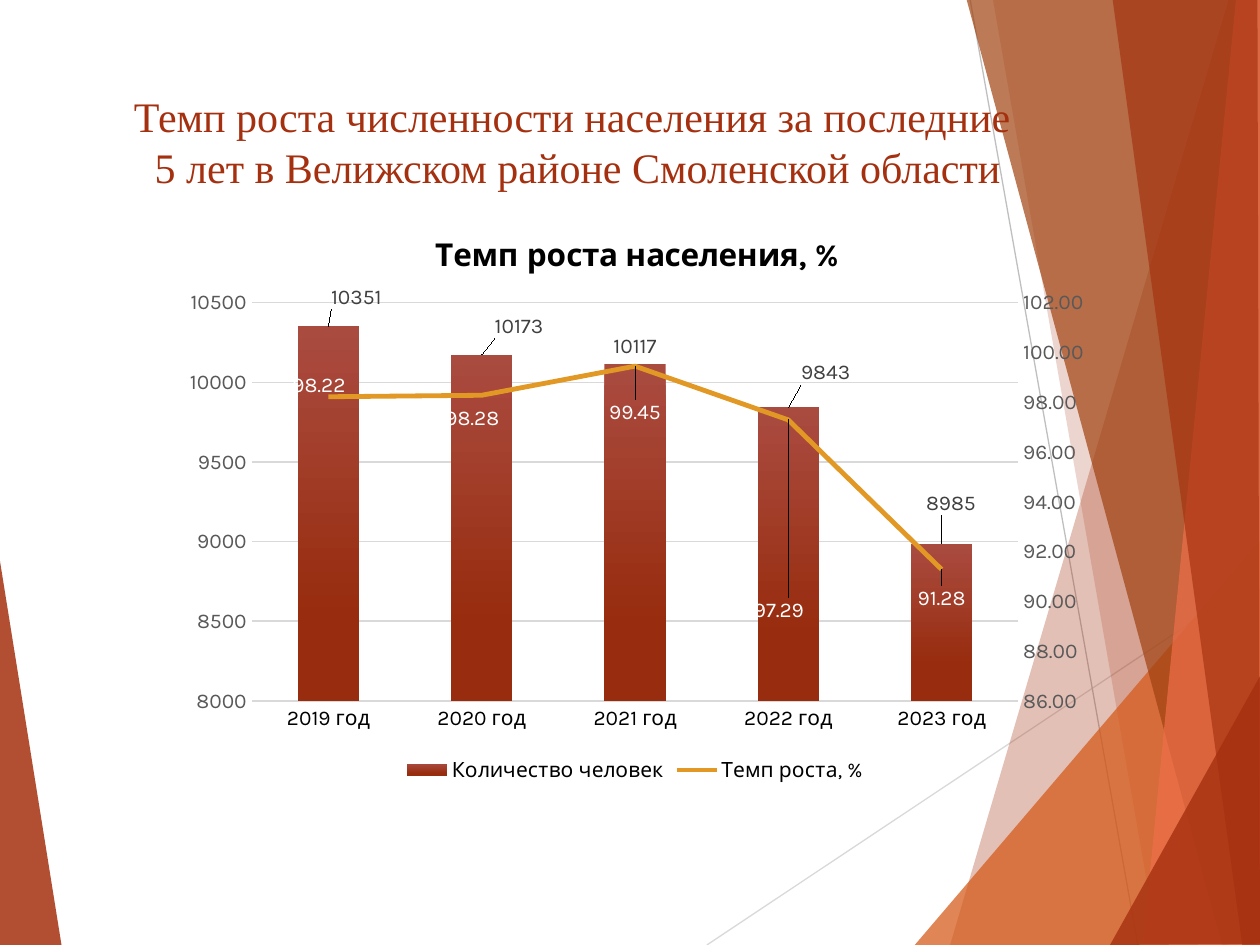
import copy
import pptx
import pptx.chart.data
import pptx.dml.color
import pptx.enum.chart
import pptx.enum.text
import pptx.oxml
import pptx.oxml.ns
import pptx.util
from pptx.util import Inches

COLORS = {
    "rust": "A5300F", "orange": "D55816", "brown": "A04210", "coral": "EE6E4A",
    "rose": "AA4B40", "brick": "972C0E", "gold": "E19825", "black": "000000",
    "white": "FFFFFF", "dark": "404040", "gray": "595959",
    "light": "D9D9D9", "silver": "BFBFBF",
}
RGB = {name: pptx.dml.color.RGBColor.from_string(code) for name, code in COLORS.items()}
qn = pptx.oxml.ns.qn
NS = pptx.oxml.ns.nsdecls("a", "c")


def write(frame, *lines, size, font, color, bold=False):
    par = frame.paragraphs[0]
    par.alignment = pptx.enum.text.PP_ALIGN.CENTER
    for num, line in enumerate(lines):
        if num:
            par.add_line_break()
        run = par.add_run()
        run.text = line
        run.font.size = pptx.util.Pt(size)
        run.font.name = font
        run.font.bold = bold
        run.font.color.rgb = RGB[color]


def layout(node, index, tags="", **nums):
    """Give a chart part a manual layout, in fractions of the chart."""
    for old in node.findall(qn("c:layout")):
        node.remove(old)
    vals = "".join(f'<c:{key} val="{num}"/>' for key, num in nums.items())
    node.insert(index, pptx.oxml.parse_xml(
        f"<c:layout {NS}><c:manualLayout>{tags}{vals}</c:manualLayout></c:layout>"))


prs = pptx.Presentation()
prs.slide_width, prs.slide_height = Inches(10), Inches(7.5)
slide = prs.slides.add_slide(prs.slide_layouts[5])
shapes = slide.shapes

# Backdrop: thin lines and translucent facets
facets = [
    ("rust", 85, [(-0.01, 4.39), (0.49, 7.51), (-0.01, 7.5)]),
    ("rust", 30, [(9.75, 0), (7.54, 7.5), (10.02, 7.51), (10.01, 0)]),
    ("rust", 20, [(7.88, -0.01), (9.19, 7.5), (10.01, 7.5), (10.01, -0.01)]),
    ("orange", 72, [(7.26, 7.5), (10, 4.29), (10.01, 7.5)]),
    ("brown", 70, [(7.67, -0.01), (9.7, 7.5), (10.01, 7.49), (10.01, -0.01)]),
    ("coral", 70, [(9.81, -0.01), (9.07, 7.5), (10.01, 7.5), (10, -0.01)]),
    ("rust", 65, [(8.83, -0.01), (9.86, 7.5), (10, 7.5), (9.98, -0.01)]),
    ("rust", 80, [(8.81, 7.5), (10.01, 5.35), (10.01, 7.49)]),
]
rays = [("light", 5.61, 7.5, 10.01, 4.57), ("silver", 7.7, 0, 9.03, 7.5)]
for num, (color, alpha, spots) in enumerate(facets):
    start, *rest = [(Inches(x), Inches(y)) for x, y in spots]
    draft = shapes.build_freeform(*start)
    draft.add_line_segments(rest, close=True)
    facet = draft.convert_to_shape()
    facet.shadow.inherit = False
    facet.fill.solid()
    facet.fill.fore_color.rgb = RGB[color]
    facet.line.fill.background()
    tone = facet._element.spPr.find(f".//{qn('a:srgbClr')}")
    tone.append(pptx.oxml.parse_xml(f'<a:alpha {NS} val="{alpha * 1000}"/>'))
    if num == 0:
        for shade, *ends in rays:
            ray = shapes.add_connector(1, *map(Inches, ends))
            ray.line.color.rgb = RGB[shade]
            ray.line.width = pptx.util.Pt(0.75)
            ray._element.spPr.append(pptx.oxml.parse_xml(f"<a:effectLst {NS}/>"))

title = shapes.title
title.left, title.top = Inches(0.67), Inches(0.67)
title.width, title.height = Inches(7.83), Inches(1.25)
title.text_frame.vertical_anchor = pptx.enum.text.MSO_ANCHOR.TOP
write(title.text_frame, "Темп роста численности населения за последние ",
      "5 лет в Велижском районе Смоленской области",
      size=24, font="Times New Roman", color="rust")
shapes._spTree.append(title._element)  # in front of the backdrop

# Chart: head count as columns, growth rate as a line
data = pptx.chart.data.CategoryChartData()
data.categories = [f"{year} год" for year in range(2019, 2024)]
data.add_series("Количество человек", [10351, 10173, 10117, 9843, 8985])
data.add_series("Темп роста, %", [98.22, 98.28, 99.45, 97.29, 91.28], "0.00")
kinds = pptx.enum.chart
chart = shapes.add_chart(
    kinds.XL_CHART_TYPE.COLUMN_CLUSTERED, Inches(1.33), Inches(1.67),
    Inches(7.42), Inches(4.58), data).chart
chart.has_legend = True
legend = chart.legend
legend.position = kinds.XL_LEGEND_POSITION.BOTTOM
legend.include_in_layout = False
cat, val = chart.category_axis, chart.value_axis
for font, size, color in [(chart.font, 10, "black"), (legend.font, 12, "black"),
                          (cat.tick_labels.font, 12, "black"),
                          (val.tick_labels.font, 12, "gray")]:
    font.size, font.name = pptx.util.Pt(size), "Karla"
    font.color.rgb = RGB[color]
for axis in (cat, val):
    axis.major_tick_mark = axis.minor_tick_mark = kinds.XL_TICK_MARK.NONE
cat.format.line.color.rgb = RGB["light"]
cat.format.line.width = pptx.util.Pt(1)
val.format.line.fill.background()
val.minimum_scale, val.maximum_scale, val.major_unit = 8000, 10500, 500
val.tick_labels.number_format = "0"
val.tick_labels.number_format_is_linked = False
grid = val.major_gridlines.format.line
grid.color.rgb = RGB["light"]
grid.width = pptx.util.Pt(0.75)
chart.plots[0].gap_width = 150

# Second pair of axes for the line
area = chart._chartSpace.find(f".//{qn('c:plotArea')}")
bar = area.find(qn("c:barChart"))
ser = bar.findall(qn("c:ser"))[1]
left = area.find(qn("c:valAx"))
right, base = copy.deepcopy(left), copy.deepcopy(area.find(qn("c:catAx")))
left.addnext(right)
right.addnext(base)
for node, tag in [(ser, "c:invertIfNegative"), (right, "c:majorGridlines")]:
    for old in node.findall(qn(tag)):
        node.remove(old)
group = pptx.oxml.parse_xml(
    f'<c:lineChart {NS}><c:grouping val="standard"/><c:varyColors val="0"/>'
    '<c:marker val="1"/><c:axId val="501"/><c:axId val="502"/></c:lineChart>')
group.insert(2, ser)
bar.addnext(group)
for node, edits in [
    (base, {"axId": "501", "crossAx": "502", "delete": "1"}),
    (right, {"axId": "502", "crossAx": "501", "axPos": "r", "crosses": "max",
             "majorUnit": "2", "min": "86", "max": "102"}),
]:
    for tag, value in edits.items():
        node.find(f".//{qn('c:' + tag)}").set("val", value)
right.find(qn("c:numFmt")).set("formatCode", "0.00")

count, rate = (plot.series[0] for plot in chart.plots)
count.invert_if_negative = False
fill = count.format.fill
fill.gradient()
fill.gradient_angle = 270
for stop, color, spot in zip(fill.gradient_stops, ("rose", "brick"), (0, 0.78)):
    stop.color.rgb = RGB[color]
    stop.position = spot
rate.format.line.color.rgb = RGB["gold"]
rate.format.line.width = pptx.util.Pt(2.75)
rate.marker.style = kinds.XL_MARKER_STYLE.NONE
rate.smooth = False

# Value labels, each with its shift from the default place
sides = kinds.XL_LABEL_POSITION
for series, color, side, shifts in [
    (count, "dark", sides.OUTSIDE_END,
     [(0.03, -0.02), (0.04, -0.02), (0, 0), (0.04, -0.03), (0.01, -0.04)]),
    (rate, "white", sides.BELOW,
     [(-0.01, -0.05), (-0.01, 0.01), (0, 0.05), (-0.01, 0.3), (0, 0.02)]),
]:
    for num, (x, y) in enumerate(shifts):
        label = series.points[num].data_label
        label.font.size, label.font.name = pptx.util.Pt(12), "Karla"
        label.font.color.rgb = RGB[color]
        label.position = side
        if x or y:
            layout(label._get_or_add_dLbl(), 1, x=x, y=y)

chart.has_title = True
write(chart.chart_title.text_frame, "Темп роста населения, %",
      size=18, font="Karla", color="black", bold=True)
edge = '<c:xMode val="edge"/><c:yMode val="edge"/>'
layout(chart.chart_title._element, 1, edge, x=0.28, y=0.03)
layout(area, 0, '<c:layoutTarget val="inner"/>' + edge, x=0.09, y=0.16, w=0.82, h=0.69)
chart._chartSpace.find(qn("c:chart")).addnext(pptx.oxml.parse_xml(
    f"<c:spPr {NS}><a:noFill/><a:ln><a:noFill/></a:ln></c:spPr>"))

prs.save("out.pptx")
